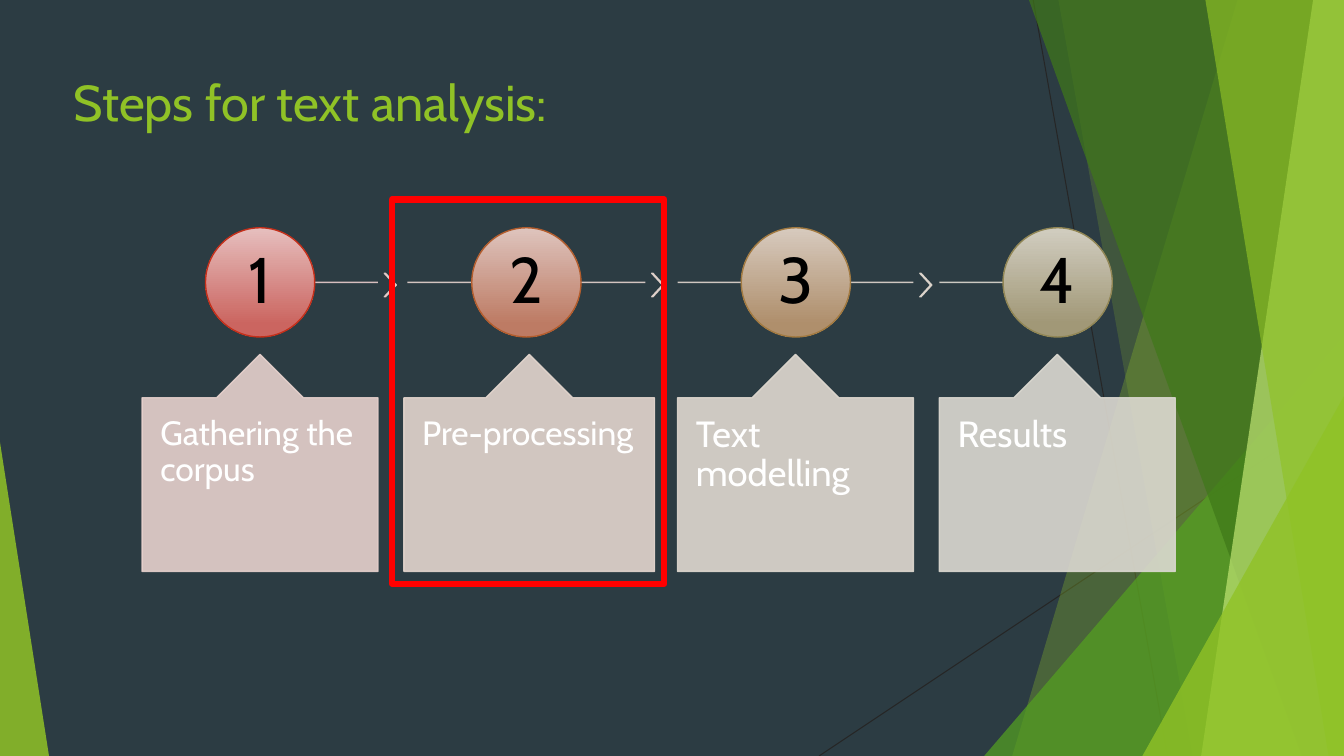
from pptx import Presentation
from pptx.dml.color import RGBColor
from pptx.enum.shapes import MSO_CONNECTOR, MSO_SHAPE
from pptx.enum.text import MSO_ANCHOR, PP_ALIGN
from pptx.oxml.ns import qn
from pptx.util import Pt
from lxml import etree

STRAIGHT = MSO_CONNECTOR.STRAIGHT
OVAL, CHEVRON = MSO_SHAPE.OVAL, MSO_SHAPE.CHEVRON
CALLOUT, RECTANGLE = MSO_SHAPE.UP_ARROW_CALLOUT, MSO_SHAPE.RECTANGLE
TOP, MIDDLE = MSO_ANCHOR.TOP, MSO_ANCHOR.MIDDLE
LEFT, CENTER = PP_ALIGN.LEFT, PP_ALIGN.CENTER

# Content
TITLE = "Steps for text analysis:"
COLOURS = {
    "background": "2C3C43", "hairline": "262626", "lime": "90C226",
    "green": "54A021", "forest": "3F7819", "pale": "C0E474",
    "frame": "FF0000", "number": "000000", "label": "FFFFFF",
}
FONT = "Cabin"
STEPS = [
    {"label": "Gathering the corpus", "size": 24, "left": 101.5, "width": 168.5,
     "centre": 185.8, "line": (195, 270), "line_colour": "EACDCD",
     "chevron_colour": "E9D0CD", "box_colour": "E7D1CD",
     "circle_colours": ("E6BFBE", "CB6560", "C42F1A")},
    {"label": "Pre-processing", "size": 24, "left": 288.5, "width": 179,
     "centre": 376, "line": (291, 461), "line_colour": "E6D3CE",
     "chevron_colour": "E5D5CE", "box_colour": "E4D6CE",
     "circle_colours": ("DEC4BD", "BD7B64", "B35D2D")},
    {"label": "Text modelling", "size": 26, "left": 484, "width": 168.5,
     "centre": 568.5, "line": (484, 652.5), "line_colour": "E2D7CF",
     "chevron_colour": "E1D8CF", "box_colour": "E0D9D0",
     "circle_colours": ("D7CABE", "AF8F6C", "A27A41")},
    {"label": "Results", "size": 26, "left": 671, "width": 168.5,
     "centre": 755.5, "line": (671, 755.5), "line_colour": "DED9D0",
     "chevron_colour": None, "box_colour": "DCD9D1",
     "circle_colours": ("D1CDC0", "A19877", "918655")},
]
HAIRLINES = [(738, 0, 834, 540), (960, 290, 585, 540)]
FACETS = [  # colour, opacity in percent, corners
    ("lime", 30, [(884, 0), (960, 0), (960, 540), (723, 540)]),
    ("lime", 20, [(756, 0), (960, 0), (960, 540), (852, 540)]),
    ("green", 72, [(960, 240), (960, 540), (703, 540)]),
    ("forest", 70, [(735, 0), (960, 0), (960, 540), (930, 540)]),
    ("pale", 70, [(938, 0), (960, 0), (960, 540), (858, 540)]),
    ("lime", 65, [(861, 0), (960, 0), (960, 540), (949, 540)]),
    ("lime", 80, [(960, 283), (960, 540), (816, 540)]),
    ("lime", 85, [(0, 316), (0, 540), (35, 540)]),
]
AXIS = 201.7
DIAMETER = 78
CHEVRON_GAP, CHEVRON_WIDTH, CHEVRON_HEIGHT = 4.5, 8.6, 16.8
BOX_TOP, BOX_HEIGHT = 253.2, 155
FRAME = (280, 142.5, 194.5, 274.5)


def set_solid(fill, colour, opacity=100):
    fill.solid()
    fill.fore_color.rgb = RGBColor.from_string(colour)
    if opacity < 100:
        for element in fill._xPr.iter(qn("a:srgbClr")):
            alpha = etree.SubElement(element, qn("a:alpha"))
            alpha.set("val", str(opacity * 1000))


def set_line(shape, colour, width=1, opacity=100):
    set_solid(shape.line.fill, colour, opacity)
    shape.line.width = Pt(width)


def add_line(x1, y1, x2, y2, colour, width=1, opacity=100):
    line = shapes.add_connector(STRAIGHT, Pt(x1), Pt(y1), Pt(x2), Pt(y2))
    set_line(line, colour, width, opacity)
    etree.SubElement(line._element.spPr, qn("a:effectLst"))


def add_preset(kind, left, top, width, height, adjustments=()):
    shape = shapes.add_shape(kind, Pt(left), Pt(top), Pt(width), Pt(height))
    shape.shadow.inherit = False
    for index, value in enumerate(adjustments):
        shape.adjustments[index] = value
    return shape


def write(shape, text, colour, size, alignment, anchor, margins, spacing):
    frame = shape.text_frame
    frame.text = text
    side, vertical = margins
    frame_format = {
        "word_wrap": True, "vertical_anchor": anchor,
        "margin_left": Pt(side), "margin_right": Pt(side),
        "margin_top": Pt(vertical), "margin_bottom": Pt(vertical),
    }
    for name, value in frame_format.items():
        setattr(frame, name, value)
    paragraph = frame.paragraphs[0]
    paragraph.alignment = alignment
    paragraph.line_spacing = spacing
    for name, value in {"name": FONT, "size": Pt(size)}.items():
        setattr(paragraph.font, name, value)
    paragraph.font.color.rgb = RGBColor.from_string(colour)


def add_step(number, step):
    # Line and chevron towards the next step
    start, end = step["line"]
    add_line(start, AXIS, end, AXIS, step["line_colour"], opacity=90)
    if step["chevron_colour"]:
        chevron = add_preset(CHEVRON, end + CHEVRON_GAP, AXIS - 6.5,
                             CHEVRON_WIDTH, CHEVRON_HEIGHT, [0.9])
        set_solid(chevron.fill, step["chevron_colour"], 90)
        set_line(chevron, step["chevron_colour"], opacity=90)

    # Numbered circle
    light, dark, outline = step["circle_colours"]
    circle = add_preset(OVAL, step["centre"] - DIAMETER / 2,
                        AXIS - DIAMETER / 2, DIAMETER, DIAMETER)
    circle.fill.gradient()
    circle.fill.gradient_angle = 270
    stops = zip(circle.fill.gradient_stops, (light, dark), (0, 0.88))
    for stop, colour, position in stops:
        stop.color.rgb = RGBColor.from_string(colour)
        stop.position = position
    set_line(circle, outline)
    write(circle, str(number), COLOURS["number"], 46, CENTER, MIDDLE, (3, 3), 0.9)

    # Labelled callout
    box = add_preset(CALLOUT, step["left"], BOX_TOP, step["width"], BOX_HEIGHT,
                     [0.4, 0.2, 0.2, 0.8])
    set_solid(box.fill, step["box_colour"], 90)
    set_line(box, step["box_colour"], opacity=90)
    write(box, step["label"], COLOURS["label"], step["size"], LEFT, TOP, (13, 13), 0.9)


presentation = Presentation()
presentation.slide_width, presentation.slide_height = Pt(960), Pt(540)
slide = presentation.slides.add_slide(presentation.slide_layouts[5])
shapes = slide.shapes
set_solid(slide.background.fill, COLOURS["background"])

# Faceted backdrop
for ends in HAIRLINES:
    add_line(*ends, COLOURS["hairline"], 0.75)
for colour, opacity, corners in FACETS:
    builder = shapes.build_freeform(*corners[0], scale=Pt(1))
    builder.add_line_segments(corners[1:], close=True)
    facet = builder.convert_to_shape()
    facet.shadow.inherit = False
    facet.line.fill.background()
    set_solid(facet.fill, COLOURS[colour], opacity)

# Steps and highlight frame
for number, step in enumerate(STEPS, 1):
    add_step(number, step)
highlight = add_preset(RECTANGLE, *FRAME)
highlight.fill.background()
set_line(highlight, COLOURS["frame"], 4.5)

# Title
title = shapes.title
title_place = {"left": 45.4, "top": 47.5, "width": 828, "height": 65}
for name, value in title_place.items():
    setattr(title, name, Pt(value))
write(title, TITLE, COLOURS["lime"], 36, LEFT, TOP, (7.2, 3.6), 1.0)

presentation.save("out.pptx")
